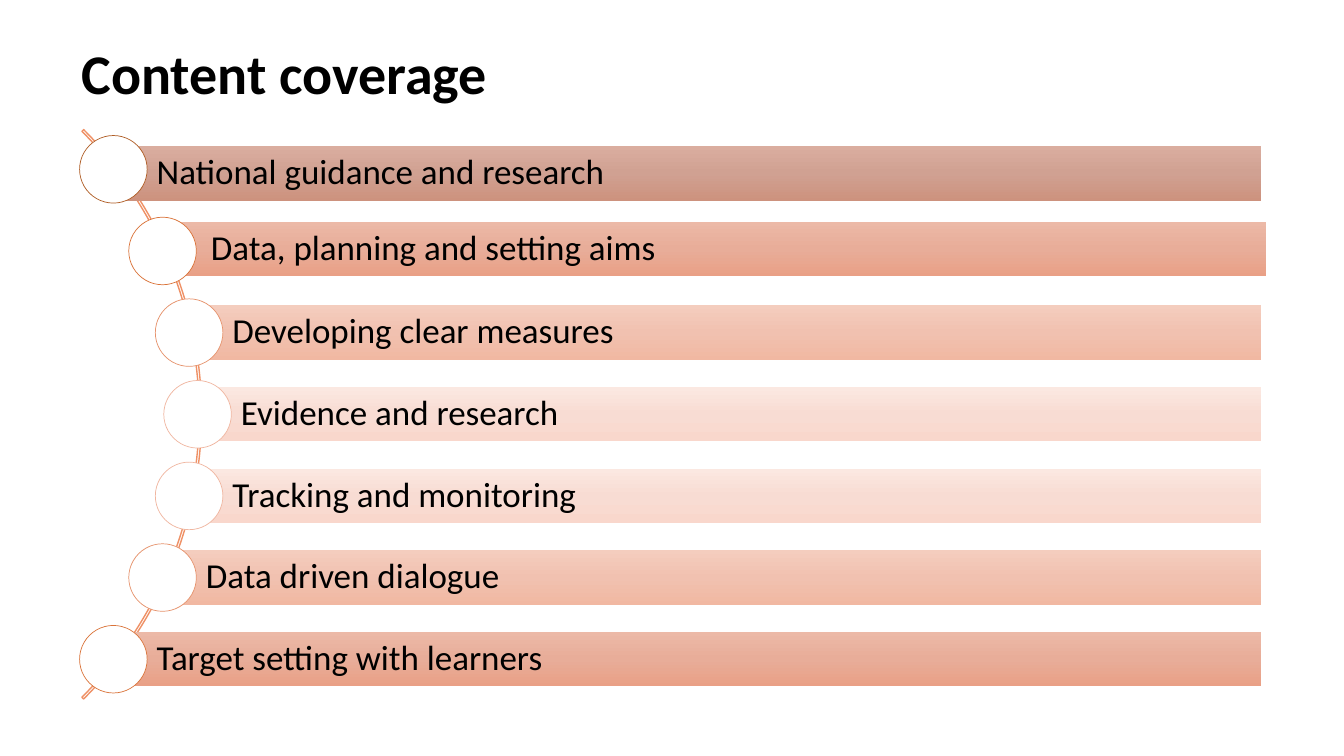
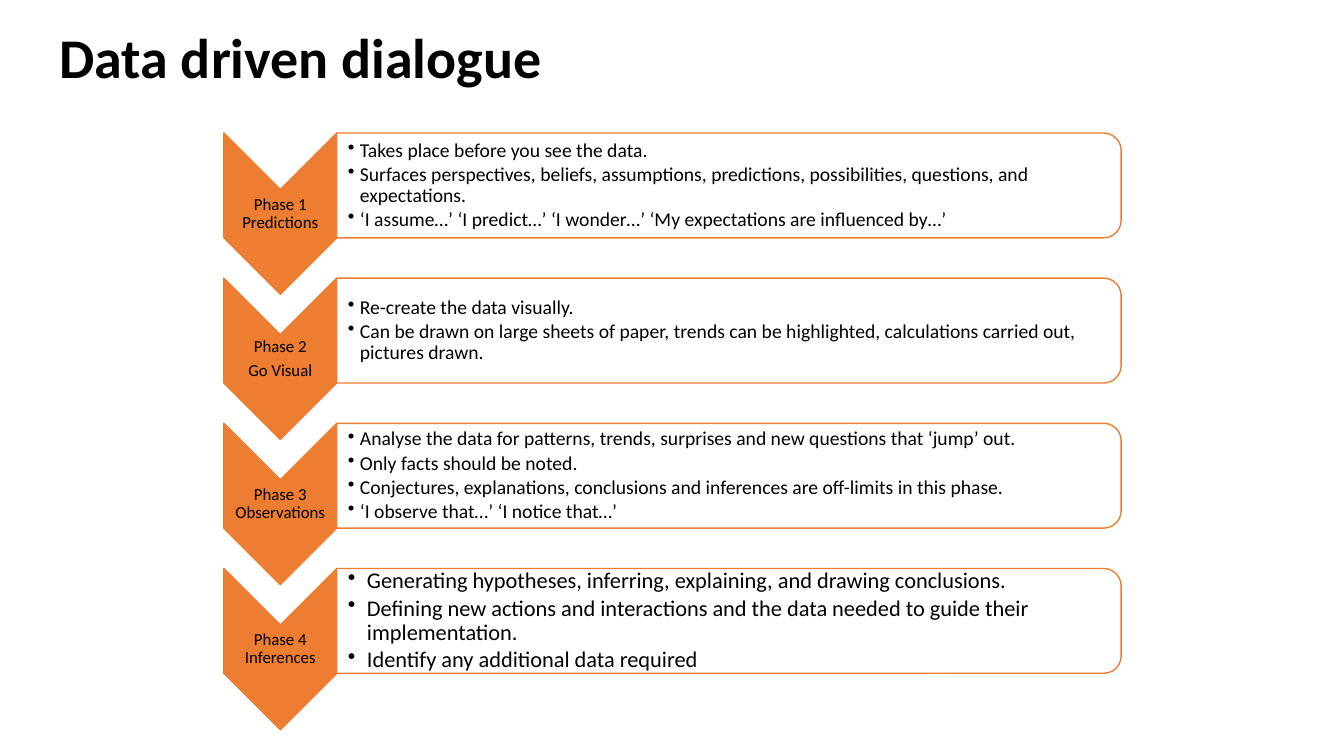
import copy
import dataclasses
import math

import pptx
import pptx.dml.color
import pptx.enum.shapes
import pptx.enum.text
import pptx.util

Inches = pptx.util.Inches
Pt = pptx.util.Pt
Shape = pptx.enum.shapes.MSO_SHAPE
Align = pptx.enum.text.PP_ALIGN
Anchor = pptx.enum.text.MSO_ANCHOR


@dataclasses.dataclass(frozen=True)
class Theme:
    font: str = "Calibri"
    text: str = "000000"
    paper: str = "FFFFFF"
    accent: str = "ED7D31"
    arc: str = "EF9166"
    title_size: int = 40
    topic_size: int = 25
    detail_size: int = 14
    large_detail_size: int = 16
    phase_size: int = 12


THEME = Theme()

# Tone: gradient from top to bottom of the bar, then the outline of its circle
TONES = {
    "deep": (("DAAD9F", "D0A192", "CD927E"), "AF5C24"),
    "strong": (("ECB9A7", "E8AD99", "E9A086"), "DA7339"),
    "medium": (("F4CDBE", "F1C1B0", "F1B8A2"), "E6926C"),
    "light": (("FBE8E1", "F8DCD3", "F9D7CC"), "F0B6A0"),
}

# Topic, tone, shift of its bar to the right and down
TOPICS = [
    ("National guidance and research", "deep", (0, 0.04)),
    ("Data, planning and setting aims", "strong", (0.05, -0.02)),
    ("Developing clear measures", "medium", (0, 0)),
    ("Evidence and research", "light", (0, 0)),
    ("Tracking and monitoring", "light", (0, 0)),
    ("Data driven dialogue", "medium", (0, 0)),
    ("Target setting with learners", "strong", (0, 0)),
]

# Phase label, its details, and the size and bullet indent of the details
COMPACT = (THEME.detail_size, 0.12)
ROOMY = (THEME.large_detail_size, 0.19)
PHASES = [
    (["Phase 1 Predictions"], [
        "Takes place before you see the data.",
        "Surfaces perspectives, beliefs, assumptions, predictions, possibilities, "
        "questions, and expectations.",
        "‘I assume…’ ‘I predict…’ ‘I wonder…’ ‘My expectations are influenced by…’",
    ], COMPACT),
    (["Phase 2", "Go Visual"], [
        "Re-create the data visually.",
        "Can be drawn on large sheets of paper, trends can be highlighted, "
        "calculations carried out, pictures drawn.",
    ], COMPACT),
    (["Phase 3 Observations"], [
        "Analyse the data for patterns, trends, surprises and new questions that ‘jump’ out.",
        "Only facts should be noted.",
        "Conjectures, explanations, conclusions and inferences are off-limits in this phase.",
        "‘I observe that…’ ‘I notice that…’",
    ], COMPACT),
    (["Phase 4 Inferences"], [
        "Generating hypotheses, inferring, explaining, and drawing conclusions.",
        "Defining new actions and interactions and the data needed to guide their "
        "implementation.",
        "Identify any additional data required",
    ], ROOMY),
]


def rgb(code):
    return pptx.dml.color.RGBColor.from_string(code)


def write(holder, lines, size, bold=False, align=Align.LEFT, insets=(0.1, 0.05, 0.1, 0.05),
          spacing=0.9, after=0, bullet_indent=None):
    """Fill a shape with paragraphs; insets run left, top, right, bottom."""
    frame = holder.text_frame
    frame.word_wrap = True
    frame.auto_size = pptx.enum.text.MSO_AUTO_SIZE.NONE
    frame.vertical_anchor = Anchor.MIDDLE
    (frame.margin_left, frame.margin_top,
     frame.margin_right, frame.margin_bottom) = map(Inches, insets)
    for number, line in enumerate(lines):
        paragraph = frame.add_paragraph() if number else frame.paragraphs[0]
        paragraph.alignment = align
        paragraph.line_spacing = spacing
        paragraph.space_before = Pt(0)
        paragraph.space_after = Pt(after)
        if bullet_indent:
            properties = paragraph._p.get_or_add_pPr()
            properties.set("marL", str(Inches(bullet_indent)))
            properties.set("indent", str(-Inches(bullet_indent)))
            bullet = properties.makeelement(pptx.oxml.ns.qn("a:buChar"), {"char": "•"})
            properties.append(bullet)
        run = paragraph.add_run()
        run.text = line
        run.font.name = THEME.font
        run.font.size = Pt(size)
        run.font.bold = bold
        run.font.color.rgb = rgb(THEME.text)


def add_titled_slide(deck, title, box):
    slide = deck.slides.add_slide(deck.slide_layouts[5])
    heading = slide.shapes.title
    heading.left, heading.top, heading.width, heading.height = map(Inches, box)
    write(heading, [title], THEME.title_size, bold=True, spacing=1.0)
    return slide


def add_shape(slide, kind, box, fill=None, line=None, line_width=1):
    shape = slide.shapes.add_shape(kind, *map(Inches, box))
    shape.shadow.inherit = False
    if fill:
        shape.fill.solid()
        shape.fill.fore_color.rgb = rgb(fill)
    else:
        shape.fill.background()
    if line:
        shape.line.color.rgb = rgb(line)
        shape.line.width = Pt(line_width)
    else:
        shape.line.fill.background()
    return shape


def add_upright(slide, kind, box, **style):
    """Place a shape turned by 90 degrees so that it covers the given box."""
    left, top, width, height = box
    turned = (left + (width - height) / 2, top + (height - width) / 2, height, width)
    shape = add_shape(slide, kind, turned, **style)
    shape.rotation = 90
    return shape


def shade_down(shape, colours):
    """Fill with evenly spaced colours from top to bottom."""
    shape.fill.gradient()
    shape.fill.gradient_angle = 270
    stop_list = shape._element.xpath(".//a:gsLst")[0]
    while len(stop_list) < len(colours):
        stop_list.append(copy.deepcopy(stop_list[0]))
    for number, (stop, colour) in enumerate(zip(shape.fill.gradient_stops, colours)):
        stop.position = number / (len(colours) - 1)
        stop.color.rgb = rgb(colour)


def draw_topic_arc(slide, box):
    """Lay the topics along an arc that bulges to the right within the box."""
    left, top, width, height = box
    radius = height / math.sqrt(2) + 0.02
    track = radius - 0.04
    centre_x, centre_y = left + 0.04 - radius / math.sqrt(2), top + height / 2
    step, bar_height, circle = 0.81, 0.54, 0.67

    arc = add_shape(slide, Shape.BLOCK_ARC,
                    (centre_x - radius, centre_y - radius, 2 * radius, 2 * radius),
                    line=THEME.arc)
    for number, value in enumerate((189, 27, 0.003)):
        arc.adjustments[number] = value

    for number, (topic, tone, (shift_x, shift_y)) in enumerate(TOPICS):
        gradient, outline = TONES[tone]
        offset = step * (number - (len(TOPICS) - 1) / 2)
        x = centre_x + math.sqrt(track ** 2 - offset ** 2)
        y = centre_y + offset
        bar = add_shape(slide, Shape.RECTANGLE,
                        (x + shift_x, y - bar_height / 2 + shift_y,
                         left + width - x, bar_height))
        shade_down(bar, gradient)
        write(bar, [topic], THEME.topic_size, insets=(0.43, 0.07, 0.07, 0.07))
        add_shape(slide, Shape.OVAL, (x - circle / 2, y - circle / 2, circle, circle),
                  fill=THEME.paper, line=outline, line_width=0.5)


def draw_phase(slide, box, label, details, detail_size, bullet_indent):
    left, top, width, height = box
    arrow_width, panel_height, notch = 1.12, 1.04, 0.56
    panel_left, panel_width = left + arrow_width, width - arrow_width

    add_upright(slide, Shape.CHEVRON, (left, top, arrow_width, height),
                fill=THEME.accent, line=THEME.accent)
    label_box = slide.shapes.add_textbox(
        *map(Inches, (left, top + notch, arrow_width, height - 2 * notch)))
    write(label_box, label, THEME.phase_size, align=Align.CENTER,
          insets=(0.01,) * 4, after=4)

    add_upright(slide, Shape.ROUND_2_SAME_RECTANGLE,
                (panel_left, top, panel_width, panel_height),
                fill=THEME.paper, line=THEME.accent)
    detail_box = slide.shapes.add_textbox(
        *map(Inches, (panel_left, top + 0.05, panel_width - 0.05, panel_height - 0.1)))
    write(detail_box, details, detail_size, insets=(0.11, 0.01, 0.01, 0.01),
          after=detail_size * 0.15, bullet_indent=bullet_indent)


def draw_phases(slide, box):
    left, top, width, height = box
    arrow_height = 1.6
    step = (height - arrow_height) / (len(PHASES) - 1)
    for number, (label, details, detail_format) in enumerate(PHASES):
        draw_phase(slide, (left, top + number * step, width, arrow_height),
                   label, details, *detail_format)


def main():
    deck = pptx.Presentation()
    deck.slide_width, deck.slide_height = Inches(13.33), Inches(7.5)

    coverage = add_titled_slide(deck, "Content coverage", (0.71, 0.45, 5.8, 0.54))
    draw_topic_arc(coverage, (0.79, 1.3, 11.72, 5.62))

    dialogue = add_titled_slide(deck, "Data driven dialogue", (0.49, 0.17, 11.83, 0.77))
    draw_phases(dialogue, (2.22, 1.32, 8.9, 5.92))

    deck.save("out.pptx")


if __name__ == "__main__":
    main()
